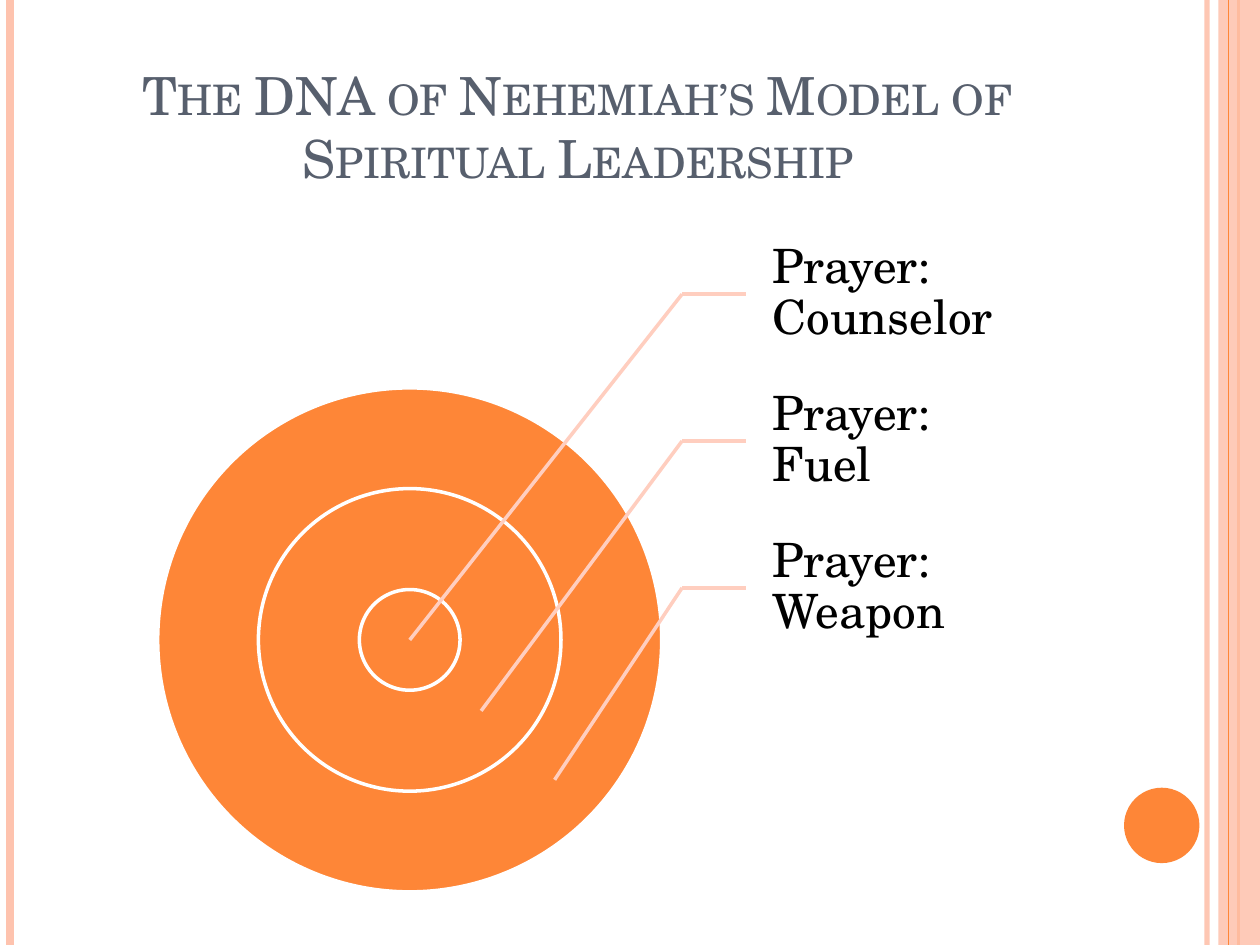
from dataclasses import dataclass

from lxml import etree
from pptx import Presentation
from pptx import util as u
from pptx.dml.color import RGBColor
from pptx.enum import shapes, text
from pptx.oxml import ns


@dataclass(frozen=True)
class Theme:
    font: str = "TeX Gyre Schola"
    orange: str = "FE8637"
    pink: str = "FEC3AE"
    pale: str = "FFCEBF"
    white: str = "FFFFFF"
    slate: str = "575F6D"
    black: str = "000000"
    title_size: float = 30
    label_size: float = 27
    diagram_line: float = 2


@dataclass(frozen=True)
class Stripe:
    x: float
    color: str
    weight: float
    opacity: int = 100


@dataclass(frozen=True)
class Callout:
    label: str
    target_x: float
    target_y: float


THEME = Theme()
WIDTH, HEIGHT = 25.4, 19.05
BACK_STRIPES = (
    Stripe(24.33, THEME.pink, 3, 93),
    Stripe(0.2, THEME.pink, 4.5),
    Stripe(24.97, THEME.orange, 1.5),
)
FRONT_STRIPE = Stripe(24.77, THEME.orange, 0.75)
CENTER_X, CENTER_Y = 8.26, 12.9
RING_DIAMETERS = (10.16, 6.1, 2.03)
CALLOUTS = (
    Callout("Prayer: Counselor", CENTER_X, CENTER_Y),
    Callout("Prayer: Fuel", 9.7, 14.33),
    Callout("Prayer: Weapon", 11.18, 15.72),
)
LABEL_LEFT, LABEL_TOP, LABEL_WIDTH, LABEL_HEIGHT = 15.04, 4.45, 5.08, 2.96
ELBOW_X = 13.75


def set_opacity(item, percent: int) -> None:
    if percent < 100:
        color = next(item._element.spPr.iter(ns.qn("a:srgbClr")))
        etree.SubElement(color, ns.qn("a:alpha"), val=str(percent * 1000))


def add_line(slide, start: tuple, end: tuple, color: str, weight: float, opacity: int = 100) -> None:
    points = [u.Cm(value) for value in (*start, *end)]
    line = slide.shapes.add_connector(shapes.MSO_CONNECTOR.STRAIGHT, *points)
    line.line.color.rgb = RGBColor.from_string(color)
    line.line.width = u.Pt(weight)
    set_opacity(line, opacity)
    etree.SubElement(line._element.spPr, ns.qn("a:effectLst"))


def add_stripe(slide, stripe: Stripe) -> None:
    add_line(slide, (stripe.x, 0), (stripe.x, HEIGHT), stripe.color, stripe.weight, stripe.opacity)


def add_filled(slide, kind, area: tuple, color: str, outline: str | None = None, opacity: int = 100) -> None:
    shape = slide.shapes.add_shape(kind, *(u.Cm(value) for value in area))
    shape.shadow.inherit = False
    shape.fill.solid()
    shape.fill.fore_color.rgb = RGBColor.from_string(color)
    set_opacity(shape, opacity)
    if outline:
        shape.line.color.rgb = RGBColor.from_string(outline)
        shape.line.width = u.Pt(THEME.diagram_line)
    else:
        shape.line.fill.background()


def add_text(slide, content: str, area: tuple, *, size: float, color: str, anchor, align,
             insets: tuple = (0.25, 0.13, 0.25, 0.13), spacing: float = 1.0,
             small_caps: bool = False) -> None:
    box = slide.shapes.add_textbox(*(u.Cm(value) for value in area))
    frame = box.text_frame
    frame.word_wrap = True
    frame.vertical_anchor = anchor
    frame.margin_left, frame.margin_top, frame.margin_right, frame.margin_bottom = map(u.Cm, insets)
    para = frame.paragraphs[0]
    para.alignment = align
    para.line_spacing = spacing
    span = para.add_run()
    span.text = content
    span.font.name = THEME.font
    span.font.size = u.Pt(size)
    span.font.color.rgb = RGBColor.from_string(color)
    if small_caps:
        span._r.get_or_add_rPr().set("cap", "small")


def add_callout(slide, callout: Callout, top: float) -> None:
    add_text(slide, callout.label, (LABEL_LEFT, top, LABEL_WIDTH, LABEL_HEIGHT),
             size=THEME.label_size, color=THEME.black, anchor=text.MSO_ANCHOR.MIDDLE,
             align=text.PP_ALIGN.LEFT, insets=(0.53, 0.1, 0.1, 0.1), spacing=0.9)
    elbow = (ELBOW_X, top + LABEL_HEIGHT / 2)
    for end in ((LABEL_LEFT, elbow[1]), (callout.target_x, callout.target_y)):
        add_line(slide, elbow, end, THEME.pale, THEME.diagram_line)


def main() -> None:
    deck = Presentation()
    deck.slide_width, deck.slide_height = u.Cm(WIDTH), u.Cm(HEIGHT)
    page = deck.slides.add_slide(deck.slide_layouts[6])

    for stripe in BACK_STRIPES:
        add_stripe(page, stripe)
    add_filled(page, shapes.MSO_SHAPE.RECTANGLE, (24.56, 0, 0.84, HEIGHT), THEME.pink, opacity=87)
    add_stripe(page, FRONT_STRIPE)
    add_filled(page, shapes.MSO_SHAPE.OVAL, (22.66, 15.88, 1.52, 1.52), THEME.orange)

    add_text(page, "The DNA of Nehemiah’s Model of Spiritual Leadership", (1.27, 0.76, 20.75, 3.18),
             size=THEME.title_size, color=THEME.slate, anchor=text.MSO_ANCHOR.BOTTOM,
             align=text.PP_ALIGN.CENTER, small_caps=True)

    for diameter in RING_DIAMETERS:
        corner = (CENTER_X - diameter / 2, CENTER_Y - diameter / 2)
        add_filled(page, shapes.MSO_SHAPE.OVAL, (*corner, diameter, diameter), THEME.orange, THEME.white)
    for index, callout in enumerate(CALLOUTS):
        add_callout(page, callout, LABEL_TOP + index * LABEL_HEIGHT)

    deck.save("out.pptx")


if __name__ == "__main__":
    main()
